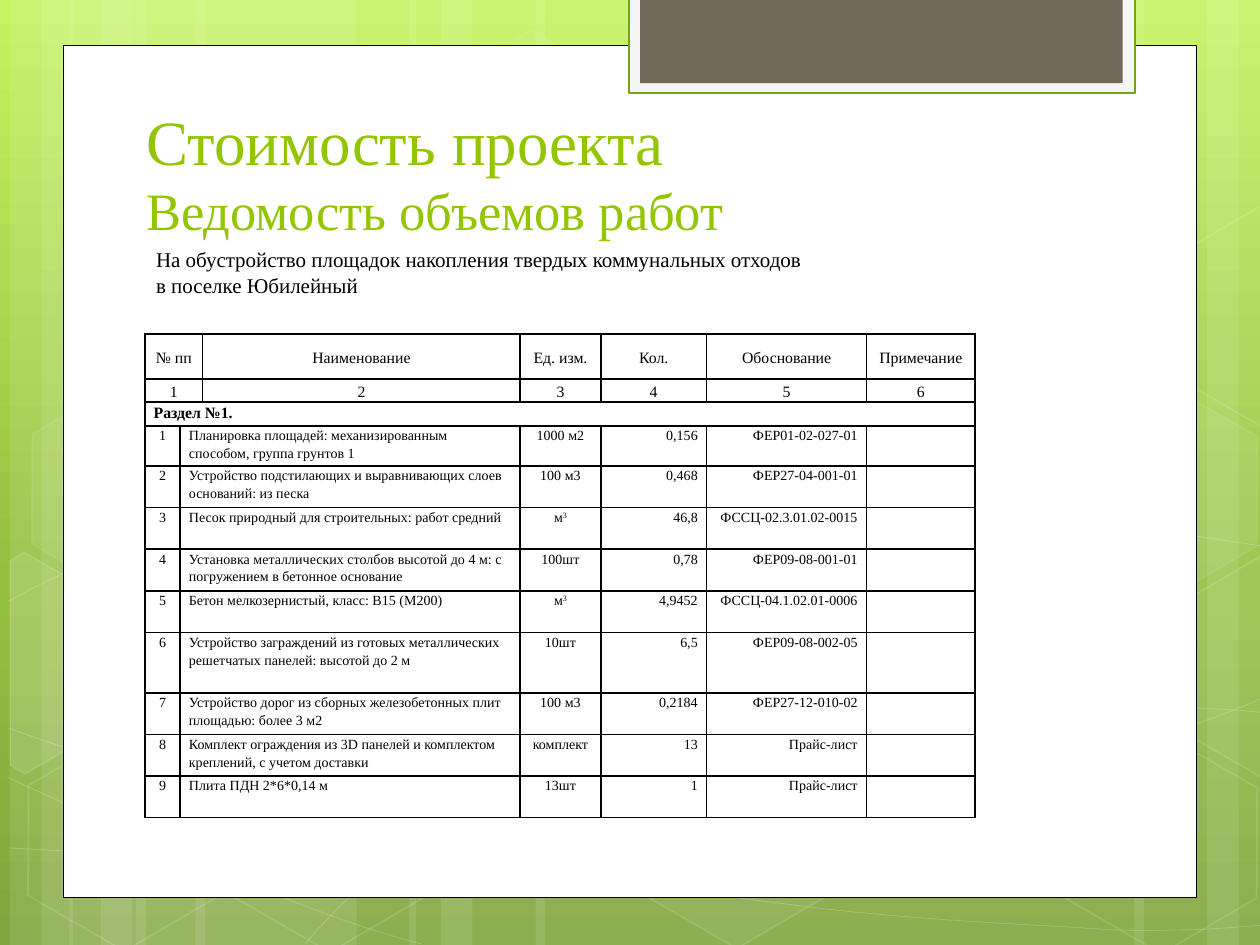
"""Slide with the bill of quantities for waste collection sites."""
import math
from copy import deepcopy

from lxml import etree
from pptx import Presentation
from pptx.dml.color import RGBColor
from pptx.enum import shapes, text
from pptx.oxml.ns import qn
from pptx.util import Inches, Pt

WHITE = RGBColor(0xFF, 0xFF, 0xFF)
BLACK = RGBColor(0, 0, 0)
LIME = RGBColor(0x94, 0xC6, 0x00)
FRAME_GREEN = RGBColor(0x74, 0xA5, 0x10)
PALE = RGBColor(0xF5, 0xF5, 0xF5)
BROWN = RGBColor(0x71, 0x68, 0x5A)
SKY = [(0, RGBColor(0xC3, 0xF3, 0x5F)), (0.62, RGBColor(0x93, 0xBF, 0x3F)),
       (1, RGBColor(0x81, 0xA5, 0x3E))]
FONT = "Times New Roman"
LEFT, CENTER, RIGHT, JUSTIFY = (text.PP_ALIGN.LEFT, text.PP_ALIGN.CENTER,
                                text.PP_ALIGN.RIGHT, text.PP_ALIGN.JUSTIFY)

STRIPES = [(1.08, 1.75, 0), (0.08, 0.5, 0), (0.33, 0.83, 0), (1.55, 1.75, 0), (0.55, 0.5, 0),
           (0.8, 0.83, 0), (7.33, 1.75, 180), (9.58, 0.5, 180), (9, 0.83, 180),
           (4.25, 3.08, 0), (3.25, 0.5, 0), (3.5, 0.83, 0)]
WAVES = [
    [(0.07, 6.73), (0.61, 6.76), (1.15, 6.79), (1.9, 6.78), (2.65, 6.77), (3.58, 6.75),
     (4.58, 6.65), (5.58, 6.55), (7, 6.36), (7.92, 6.17), (8.83, 5.98), (9.77, 5.68),
     (10.07, 5.51)],
    [(0.07, 4.77), (0.36, 4.61), (0.65, 4.46), (1.21, 4.31), (1.78, 4.16), (2.59, 3.94),
     (3.47, 3.87), (4.36, 3.8), (5.44, 3.79), (6.54, 3.87), (7.64, 3.95), (9.47, 4.26),
     (10.07, 4.34)],
    [(0.06, 6.17), (1.27, 6.72), (2.47, 7.27), (3.34, 7.49)],
    [(0.07, 5.78), (0.38, 5.89), (0.7, 6), (1.28, 6.16), (1.86, 6.31), (2.73, 6.56),
     (3.57, 6.73), (4.4, 6.9), (5.45, 7.08), (6.28, 7.18), (7.11, 7.29), (8, 7.33),
     (8.53, 7.36), (9.05, 7.4), (9.19, 7.38), (9.45, 7.38), (9.71, 7.37), (9.89, 7.35),
     (10.07, 7.34)],
    [(2.42, 7.49), (2.6, 7.29), (2.78, 7.09), (3.02, 6.91), (3.26, 6.73), (3.6, 6.53),
     (3.88, 6.39), (4.16, 6.25), (4.33, 6.19), (4.7, 6.09), (5.06, 5.99), (5.73, 5.85),
     (6.08, 5.78), (6.44, 5.71), (6.49, 5.71), (6.8, 5.69), (7.11, 5.66), (7.6, 5.63),
     (7.94, 5.62), (8.29, 5.61), (8.86, 5.62), (8.86, 5.62), (9.08, 5.62), (9.31, 5.62),
     (9.53, 5.62), (9.71, 5.63), (9.88, 5.64), (9.97, 5.65), (10.06, 5.66), (10.03, 5.65),
     (10.06, 5.66)],
]
HEXAGONS = [(3.34, 0.36, 4, 8), (4.97, 5.89, 6, 12), (0.11, 5.91, 0, 12), (0.14, 3.12, 7, 8),
            (1.74, 5.92, 0, 12), (7.53, 4.53, 10, 12), (8.34, 5.93, 0, 12),
            (8.34, 3.14, 7, 8)]
CUT_HEXAGONS = [
    (10, (0.36, 5.35),
     [(0.08, 4.45), (0.19, 4.38), (0.96, 4.82), (0.95, 5.7), (0.2, 6.14), (0.08, 6.07)]),
    (4, (9.85, 5.2),
     [(9.26, 4.85), (10.01, 4.41), (10.09, 4.46), (10.09, 6.13), (10.02, 6.17), (9.26, 5.73)]),
    (0, (9.85, 2.41),
     [(9.26, 2.07), (10.01, 1.63), (10.1, 1.68), (10.09, 3.35), (10.02, 3.39), (9.26, 2.95)]),
]
TILT = 30

COLUMNS = [0.28, 0.1, 2.52, 0.64, 0.84, 1.27, 0.86]
ROWS = [0.36, 0.18, 0.19, 0.32] + [0.33] * 4 + [0.48] + [0.33] * 3
HEADINGS = ["№ пп", "Наименование", "Ед. изм.", "Кол.", "Обоснование", "Примечание"]
WORKS = [
    ("Планировка площадей: механизированным способом, группа грунтов 1",
     "1000 м2", "0,156", "ФЕР01-02-027-01"),
    ("Устройство подстилающих и выравнивающих слоев оснований: из песка",
     "100 м3", "0,468", "ФЕР27-04-001-01"),
    ("Песок природный для строительных: работ средний",
     "м^3", "46,8", "ФССЦ-02.3.01.02-0015"),
    ("Установка металлических столбов высотой до 4 м: с погружением в бетонное основание",
     "100шт", "0,78", "ФЕР09-08-001-01"),
    ("Бетон мелкозернистый, класс: В15 (М200)", "м^3", "4,9452", "ФССЦ-04.1.02.01-0006"),
    ("Устройство заграждений из готовых металлических решетчатых панелей: высотой до 2 м",
     "10шт", "6,5", "ФЕР09-08-002-05"),
    ("Устройство дорог из сборных железобетонных плит площадью: более 3 м2",
     "100 м3", "0,2184", "ФЕР27-12-010-02"),
    ("Комплект ограждения из 3D панелей и комплектом креплений, с учетом доставки",
     "комплект", "13", "Прайс-лист"),
    ("Плита ПДН 2*6*0,14 м", "13шт", "1", "Прайс-лист"),
]


def paint(shape, fill=None, fill_alpha=100, line=None, width=1, line_alpha=100):
    """Give a shape its fill and line, with opacity in percent and no shadow."""
    shape.shadow.inherit = False
    shape.fill.background()
    shape.line.fill.background()
    if fill is not None and fill_alpha:
        shape.fill.solid()
        shape.fill.fore_color.rgb = fill
    if line is not None:
        shape.line.color.rgb = line
        shape.line.width = Pt(width)
    for place, alpha in (("./", fill_alpha), ("./a:ln/", line_alpha)):
        for color in shape._element.spPr.xpath(place + "a:solidFill/a:srgbClr"):
            if alpha < 100:
                etree.SubElement(color, qn("a:alpha")).set("val", str(alpha * 1000))


def add_preset(slide, kind, box, rotation=0, **style):
    """Add a painted preset shape."""
    shape = slide.shapes.add_shape(kind, *map(Inches, box))
    shape.rotation = rotation
    paint(shape, **style)
    return shape


def add_outline(slide, points, closed, **style):
    """Add a painted outline through points given in inches."""
    corners = [(Inches(x), Inches(y)) for x, y in points]
    builder = slide.shapes.build_freeform(*corners[0])
    builder.add_line_segments(corners[1:], close=closed)
    shape = builder.convert_to_shape()
    paint(shape, **style)
    return shape


def add_wave(slide, points):
    """Add a curve whose points after the first form cubic segments."""
    wave = add_outline(slide, points, False, line=WHITE, width=0.5, line_alpha=20)
    segments = wave._element.xpath(".//a:lnTo")
    for i in range(0, len(segments), 3):
        first = segments[i]
        first.tag = qn("a:cubicBezTo")
        for other in segments[i + 1:i + 3]:
            first.append(other[0])
            other.getparent().remove(other)


def turn_back(point, center):
    """Rotate a point about a center against the tilt of the hexagons."""
    angle = math.radians(-TILT)
    dx, dy = point[0] - center[0], point[1] - center[1]
    return (center[0] + dx * math.cos(angle) - dy * math.sin(angle),
            center[1] + dx * math.sin(angle) + dy * math.cos(angle))


def set_background(slide):
    """Fill the background with the green gradient."""
    fill = slide.background.fill
    fill.gradient()
    fill.gradient_angle = 270
    stop_list = slide.element.xpath(".//p:bg//a:gsLst")[0]
    stop_list.append(deepcopy(stop_list[-1]))
    for stop, (position, color) in zip(fill.gradient_stops, SKY):
        stop.position = position
        stop.color.rgb = color


def add_decor(slide):
    """Add stripes, waves, hexagons and the white sheet with its tab."""
    rectangle = shapes.MSO_SHAPE.RECTANGLE
    for left, width, rotation in STRIPES:
        add_preset(slide, rectangle, (left, 0, width, 7.5), rotation, fill=WHITE, fill_alpha=10)
    for wave in WAVES:
        add_wave(slide, wave)
    for left, top, fill_alpha, line_alpha in HEXAGONS:
        hexagon = add_preset(slide, shapes.MSO_SHAPE.HEXAGON, (left, top, 1.75, 1.52), TILT,
                             fill=WHITE, fill_alpha=fill_alpha, line=WHITE,
                             line_alpha=line_alpha)
        hexagon.adjustments[0] = 0.285
    for fill_alpha, center, corners in CUT_HEXAGONS:
        upright = [turn_back(corner, center) for corner in corners]
        add_outline(slide, upright, True, fill=WHITE, fill_alpha=fill_alpha, line=WHITE,
                    line_alpha=12).rotation = TILT
    add_preset(slide, rectangle, (0.5, 0.36, 9, 6.76), fill=WHITE, line=BLACK, width=0.5)
    add_preset(slide, rectangle, (4.99, -0.02, 4.02, 0.76), fill=PALE, line=FRAME_GREEN,
               width=1.25)
    add_preset(slide, rectangle, (5.08, -0.02, 3.83, 0.68), fill=BROWN)


def format_run(run, size, color=BLACK, bold=False):
    """Set the font of a run."""
    run.font.name, run.font.size, run.font.bold = FONT, Pt(size), bold
    run.font.color.rgb = color


def set_title(slide):
    """Place the two-line title above the decor."""
    title = slide.shapes.title
    slide.shapes._spTree.append(title._element)
    title.left, title.top, title.width, title.height = map(Inches, (1.06, 0.76, 7.68, 1.26))
    frame = title.text_frame
    frame.text = "Стоимость проекта\vВедомость объемов работ"
    frame.auto_size = text.MSO_AUTO_SIZE.NONE
    frame.vertical_anchor = text.MSO_ANCHOR.MIDDLE
    frame.margin_bottom = Inches(0.11)
    heading = frame.paragraphs[0]
    heading.alignment = LEFT
    for run, size in zip(heading.runs, (36, 30)):
        format_run(run, size, LIME)
    heading._p.find(qn("a:br")).append(deepcopy(heading.runs[0].font._element))


def add_subject(slide):
    """Add the two lines that name the place of the works."""
    subject = slide.shapes.add_textbox(*map(Inches, (1.14, 1.61, 5.43, 1.36)))
    frame = subject.text_frame
    frame.margin_top = Inches(0.35)
    frame.text = ("На обустройство площадок накопления твердых коммунальных отходов\n"
                  "в поселке Юбилейный")
    for paragraph in frame.paragraphs:
        format_run(paragraph.runs[0], 12)


def add_borders(cell):
    """Draw thin black lines around a cell."""
    properties = cell._tc.get_or_add_tcPr()
    for index, side in enumerate(("lnL", "lnR", "lnT", "lnB")):
        border = etree.Element(qn("a:" + side), w=str(Pt(1)))
        fill = etree.SubElement(border, qn("a:solidFill"))
        etree.SubElement(fill, qn("a:srgbClr"), val=str(BLACK))
        properties.insert(index, border)


def fill_cell(cell, content, size, alignment, bold=False):
    """Write a cell; a caret starts a superscript."""
    paragraph = cell.text_frame.paragraphs[0]
    paragraph.alignment, paragraph.line_spacing = alignment, 1.15
    for level, part in enumerate(content.split("^")):
        run = paragraph.add_run()
        run.text = part
        format_run(run, size, bold=bold)
        if level:
            run.font._element.set("baseline", "30000")


def add_works_table(slide):
    """Add the table of works."""
    table = slide.shapes.add_table(len(ROWS), len(COLUMNS), Inches(1.15), Inches(2.65),
                                   Inches(sum(COLUMNS)), Inches(sum(ROWS))).table
    for column, width in zip(table.columns, COLUMNS):
        column.width = Inches(width)
    for row, height in zip(table.rows, ROWS):
        row.height = Inches(height)
    for cell in table.iter_cells():
        cell.margin_left = cell.margin_right = Inches(0.07)
        cell.margin_top = cell.margin_bottom = 0
        cell.fill.background()
        add_borders(cell)
        cell.text_frame.paragraphs[0]._p.get_or_add_endParaRPr().set("sz", "800")
    for row, labels in enumerate((HEADINGS, "123456")):
        table.cell(row, 0).merge(table.cell(row, 1))
        for column, label in zip((0, 2, 3, 4, 5, 6), labels):
            cell = table.cell(row, column)
            cell.vertical_anchor = text.MSO_ANCHOR.MIDDLE
            fill_cell(cell, label, 9, CENTER)
    table.cell(2, 0).merge(table.cell(2, 6))
    fill_cell(table.cell(2, 0), "Раздел №1.", 9, JUSTIFY, bold=True)
    for number, work in enumerate(WORKS, 1):
        row = number + 2
        table.cell(row, 1).merge(table.cell(row, 2))
        for column, content, alignment in zip((0, 1, 3, 4, 5), (str(number), *work),
                                              (CENTER, LEFT, CENTER, RIGHT, RIGHT)):
            fill_cell(table.cell(row, column), content, 8, alignment)


def main():
    """Build and save the slide."""
    deck = Presentation()
    deck.slide_width, deck.slide_height = Inches(10), Inches(7.5)
    slide = deck.slides.add_slide(deck.slide_layouts[5])
    set_background(slide)
    add_decor(slide)
    set_title(slide)
    add_works_table(slide)
    add_subject(slide)
    deck.save("out.pptx")


if __name__ == "__main__":
    main()
